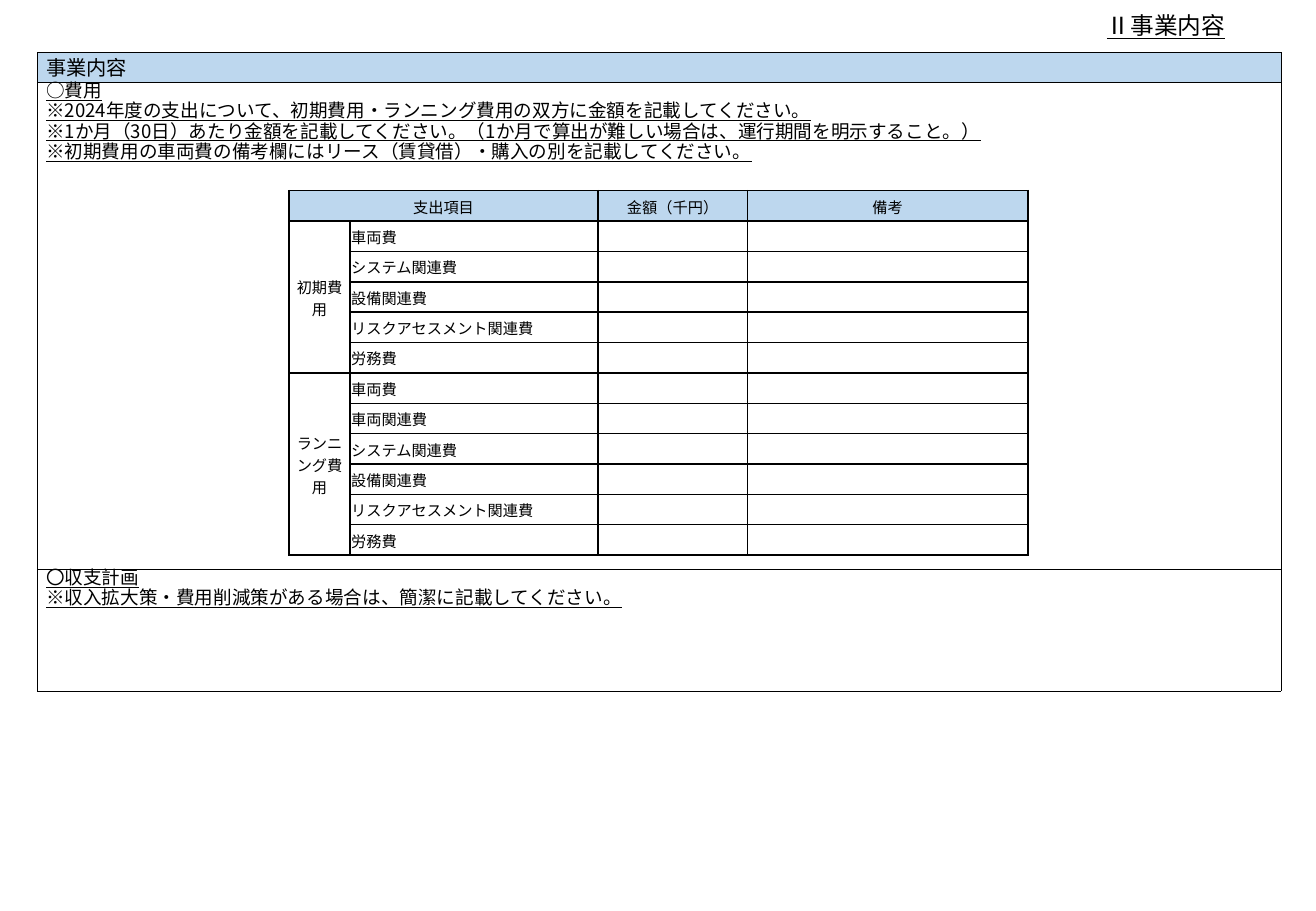
"""Build the business content form with its cost table."""
from lxml import etree
from pptx import Presentation
from pptx.dml.color import RGBColor
from pptx.enum import text
from pptx.oxml import ns
from pptx.util import Inches, Pt

BLACK = RGBColor(0, 0, 0)
BLUE = RGBColor(0xBD, 0xD7, 0xEE)
SANS = "Noto Sans CJK JP"
MID = text.MSO_ANCHOR.MIDDLE
ALIGN = text.PP_ALIGN


def make_grid(slide, box, cols, rows, width, pads):
    table = slide.shapes.add_table(len(rows), len(cols), *map(Inches, box)).table
    table.first_row = table.horz_banding = False
    for col, size in zip(table.columns, cols):
        col.width = Inches(size)
    for row, size in zip(table.rows, rows):
        row.height = Inches(size)
    for cell in table.iter_cells():
        (cell.margin_left, cell.margin_top,
         cell.margin_right, cell.margin_bottom) = map(Inches, pads)
        props = cell._tc.get_or_add_tcPr()
        for side in ("a:lnL", "a:lnR", "a:lnT", "a:lnB"):
            line = etree.SubElement(props, ns.qn(side), w=str(Pt(width)))
            fill = etree.SubElement(line, ns.qn("a:solidFill"))
            etree.SubElement(fill, ns.qn("a:srgbClr"), val=str(BLACK))
        cell.fill.background()
    return table


def style(par, size, font, align):
    par.font.size, par.font.name = Pt(size), font
    par.font.color.rgb = BLACK
    par.alignment = align
    if not par.runs:
        par._p.get_or_add_endParaRPr().set("sz", str(size * 100))


prs = Presentation()
prs.slide_width, prs.slide_height = Inches(10.83), Inches(7.5)
slide = prs.slides.add_slide(prs.slide_layouts[5])

title = slide.shapes.title
title.left, title.top = Inches(9.01), Inches(-0.06)
title.width, title.height = Inches(1.53), Inches(0.44)
frame = title.text_frame
frame.text = "Ⅱ事業内容"
frame.vertical_anchor = text.MSO_ANCHOR.BOTTOM
frame.auto_size = text.MSO_AUTO_SIZE.NONE
head = frame.paragraphs[0]
style(head, 14, SANS, ALIGN.LEFT)
head.font.underline = True
head.line_spacing = 0.9

parts = [
    ["事業内容"],
    ["○費用",
     "※2024年度の支出について、初期費用・ランニング費用の双方に金額を記載してください。",
     "※1か月（30日）あたり金額を記載してください。（1か月で算出が難しい場合は、運行期間を明示すること。）",
     "※初期費用の車両費の備考欄にはリース（賃貸借）・購入の別を記載してください。"],
    ["〇収支計画",
     "※収入拡大策・費用削減策がある場合は、簡潔に記載してください。"],
]
form = make_grid(slide, (0.31, 0.43, 10.23, 5.26), [10.23],
                 [0.25, 4.01, 1], 0.25, (0.07, 0, 0.07, 0))
for num, lines in enumerate(parts):
    cell = form.cell(num, 0)
    cell.text = "\n".join(lines)
    for par in cell.text_frame.paragraphs:
        style(par, 11 if num else 12, SANS, ALIGN.JUSTIFY)
        if num:
            par.font.underline = True
            par.line_spacing = Pt(12)
form.cell(0, 0).fill.solid()
form.cell(0, 0).fill.fore_color.rgb = BLUE

groups = {
    "初期費用": ["車両費", "システム関連費", "設備関連費",
             "リスクアセスメント関連費", "労務費"],
    "ランニング費用": ["車両費", "車両関連費", "システム関連費", "設備関連費",
                "リスクアセスメント関連費", "労務費"],
}
costs = make_grid(slide, (2.38, 1.57, 6.08, 3), [0.5, 2.04, 1.23, 2.31],
                  [0.25] * 12, 1, (0.01, 0.01, 0.01, 0))
for col, name in ((0, "支出項目"), (2, "金額（千円）"), (3, "備考")):
    costs.cell(0, col).text = name
costs.cell(0, 0).merge(costs.cell(0, 1))
top = 1
for name, items in groups.items():
    group = costs.cell(top, 0)
    group.text = name
    group._tc.get_or_add_tcPr().set("vert", "eaVert")
    for row, item in enumerate(items, top):
        costs.cell(row, 1).text = item
    group.merge(costs.cell(top + len(items) - 1, 0))
    top += len(items)
for num, cell in enumerate(costs.iter_cells()):
    row, col = divmod(num, 4)
    cell.vertical_anchor = MID
    middle = row == 0 or col == 0
    style(cell.text_frame.paragraphs[0], 9, "Calibri",
          ALIGN.CENTER if middle else ALIGN.LEFT)
    if row == 0:
        cell.fill.solid()
        cell.fill.fore_color.rgb = BLUE

prs.save("out.pptx")
